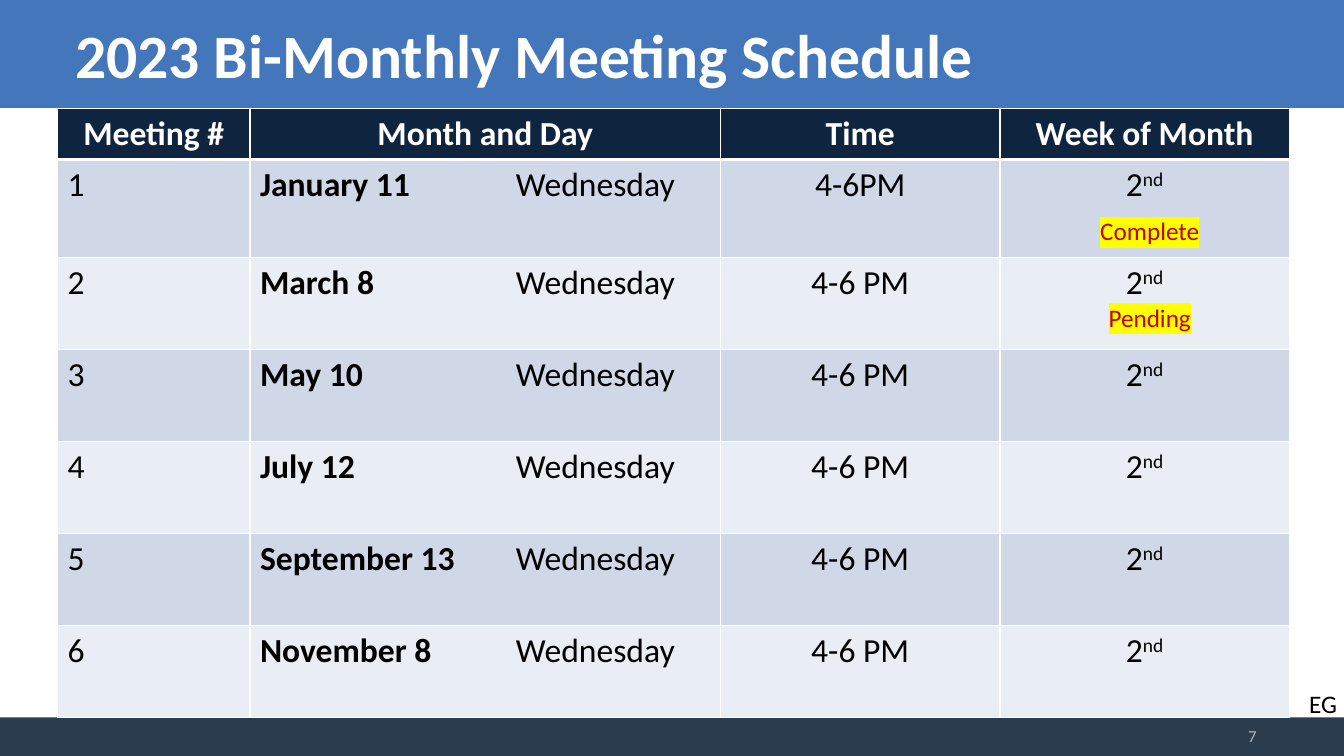
from lxml import etree
from pptx import Presentation
from pptx import util as u
from pptx.dml.color import RGBColor
from pptx.enum import shapes, text
from pptx.oxml.ns import qn

WHITE = RGBColor(0xFF, 0xFF, 0xFF)
BLACK = RGBColor(0, 0, 0)
BLUE = RGBColor(0x43, 0x76, 0xBB)
SLATE = RGBColor(0x2A, 0x3C, 0x4E)
NAVY = RGBColor(0x0F, 0x24, 0x3E)
BAND_DARK = RGBColor(0xD0, 0xD8, 0xE8)
BAND_LIGHT = RGBColor(0xE9, 0xED, 0xF4)
GREY = RGBColor(0xB5, 0xB5, 0xB5)
RED = RGBColor(0xC0, 0, 0)
YELLOW = RGBColor(0xFF, 0xFF, 0)

FONT = "Calibri"
LEFT, CENTER, RIGHT = text.PP_ALIGN.LEFT, text.PP_ALIGN.CENTER, text.PP_ALIGN.RIGHT
TOP, MIDDLE = text.MSO_ANCHOR.TOP, text.MSO_ANCHOR.MIDDLE

HEADERS = ["Meeting #", "Month and Day", "Time", "Week of Month"]
MEETINGS = [
    ("January 11", "4-6PM"),
    ("March 8", "4-6 PM"),
    ("May 10", "4-6 PM"),
    ("July 12", "4-6 PM"),
    ("September 13", "4-6 PM"),
    ("November 8", "4-6 PM"),
]
COLUMN_WIDTHS = [4.85, 11.86, 7.04, 7.29]
ROW_HEIGHTS = [1.29, 2.47] + [2.32] * 5
WEEKDAY_TAB = 6.45


def add_run(paragraph, wording, size, color, bold=False):
    """Append one styled run to the paragraph and return it."""
    run = paragraph.add_run()
    run.text = wording
    run.font.name = FONT
    run.font.size = u.Pt(size)
    run.font.bold = bold
    run.font.color.rgb = color
    return run


def add_bar(slide, top, height, color):
    """Draw a full-width bar."""
    bar = slide.shapes.add_shape(
        shapes.MSO_SHAPE.RECTANGLE, 0, u.Cm(top), u.Cm(33.87), u.Cm(height))
    bar.shadow.inherit = False
    bar.fill.solid()
    bar.fill.fore_color.rgb = color
    bar.line.fill.background()


def add_label(slide, box, wording, size, color, align=LEFT, anchor=TOP, bold=False):
    """Place a one-line text box and return its run."""
    frame = slide.shapes.add_textbox(*(u.Cm(length) for length in box)).text_frame
    frame.word_wrap = True
    frame.vertical_anchor = anchor
    paragraph = frame.paragraphs[0]
    paragraph.alignment = align
    return add_run(paragraph, wording, size, color, bold)


def add_status(slide, top, wording):
    """Place a highlighted meeting status."""
    run = add_label(slide, (26.37, top, 5.21, 1.02), wording, 18, RED, CENTER)
    highlight = etree.Element(qn("a:highlight"))
    etree.SubElement(highlight, qn("a:srgbClr"), val=str(YELLOW))
    run.font._element.find(qn("a:solidFill")).addnext(highlight)


def style_cell(cell, color, bottom_width=1):
    """Give the cell white borders and a solid fill."""
    properties = cell._tc.get_or_add_tcPr()
    for side, width in (("L", 1), ("R", 1), ("T", 1), ("B", bottom_width)):
        line = etree.SubElement(properties, qn(f"a:ln{side}"), w=str(u.Pt(width)))
        fill = etree.SubElement(line, qn("a:solidFill"))
        etree.SubElement(fill, qn("a:srgbClr"), val=str(WHITE))
    cell.fill.solid()
    cell.fill.fore_color.rgb = color


def add_tab_stop(paragraph, position):
    """Set one left tab stop on the paragraph."""
    tabs = etree.SubElement(paragraph._p.get_or_add_pPr(), qn("a:tabLst"))
    etree.SubElement(tabs, qn("a:tab"), pos=str(u.Cm(position)), algn="l")


def fill_meeting(cells, number, date, time):
    """Write one meeting into the cells of its row."""
    number_line, date_line, time_line, week_line = (
        cell.text_frame.paragraphs[0] for cell in cells)
    add_run(number_line, str(number), 24, BLACK)
    add_tab_stop(date_line, WEEKDAY_TAB)
    add_run(date_line, date, 24, BLACK, bold=True)
    add_run(date_line, "\tWednesday", 24, BLACK)
    time_line.alignment = week_line.alignment = CENTER
    add_run(time_line, time, 24, BLACK)
    add_run(week_line, "2", 24, BLACK)
    add_run(week_line, "nd", 24, BLACK).font._element.set("baseline", "30000")


def add_schedule(slide):
    """Build the meeting table."""
    table = slide.shapes.add_table(
        len(ROW_HEIGHTS), len(COLUMN_WIDTHS), u.Cm(1.45), u.Cm(2.73),
        u.Cm(sum(COLUMN_WIDTHS)), u.Cm(sum(ROW_HEIGHTS))).table
    for column, width in zip(table.columns, COLUMN_WIDTHS):
        column.width = u.Cm(width)
    for row, height in zip(table.rows, ROW_HEIGHTS):
        row.height = u.Cm(height)
    for cell, header in zip(table.rows[0].cells, HEADERS):
        style_cell(cell, NAVY, bottom_width=3)
        paragraph = cell.text_frame.paragraphs[0]
        paragraph.alignment = CENTER
        add_run(paragraph, header, 24, WHITE, bold=True)
    for number, (date, time) in enumerate(MEETINGS, start=1):
        cells = list(table.rows[number].cells)
        for cell in cells:
            style_cell(cell, BAND_DARK if number % 2 else BAND_LIGHT)
        fill_meeting(cells, number, date, time)


def main():
    """Build and save the schedule slide."""
    presentation = Presentation()
    presentation.slide_width = u.Cm(33.87)
    presentation.slide_height = u.Cm(19.05)
    slide = presentation.slides.add_slide(presentation.slide_layouts[6])
    add_bar(slide, 0, 2.72, BLUE)
    add_bar(slide, 18.08, 0.97, SLATE)
    add_label(slide, (1.65, 0.15, 30.48, 2.44), "2023 Bi-Monthly Meeting Schedule",
              44, WHITE, anchor=MIDDLE, bold=True)
    add_schedule(slide)
    add_label(slide, (24.33, 18.03, 7.59, 1.02), "7", 12, GREY, RIGHT, MIDDLE)
    add_status(slide, 7.49, "Pending")
    add_status(slide, 5.31, "Complete")
    add_label(slide, (32.74, 17.22, 2.79, 1.02), "EG", 18, BLACK)
    presentation.save("out.pptx")


if __name__ == "__main__":
    main()
